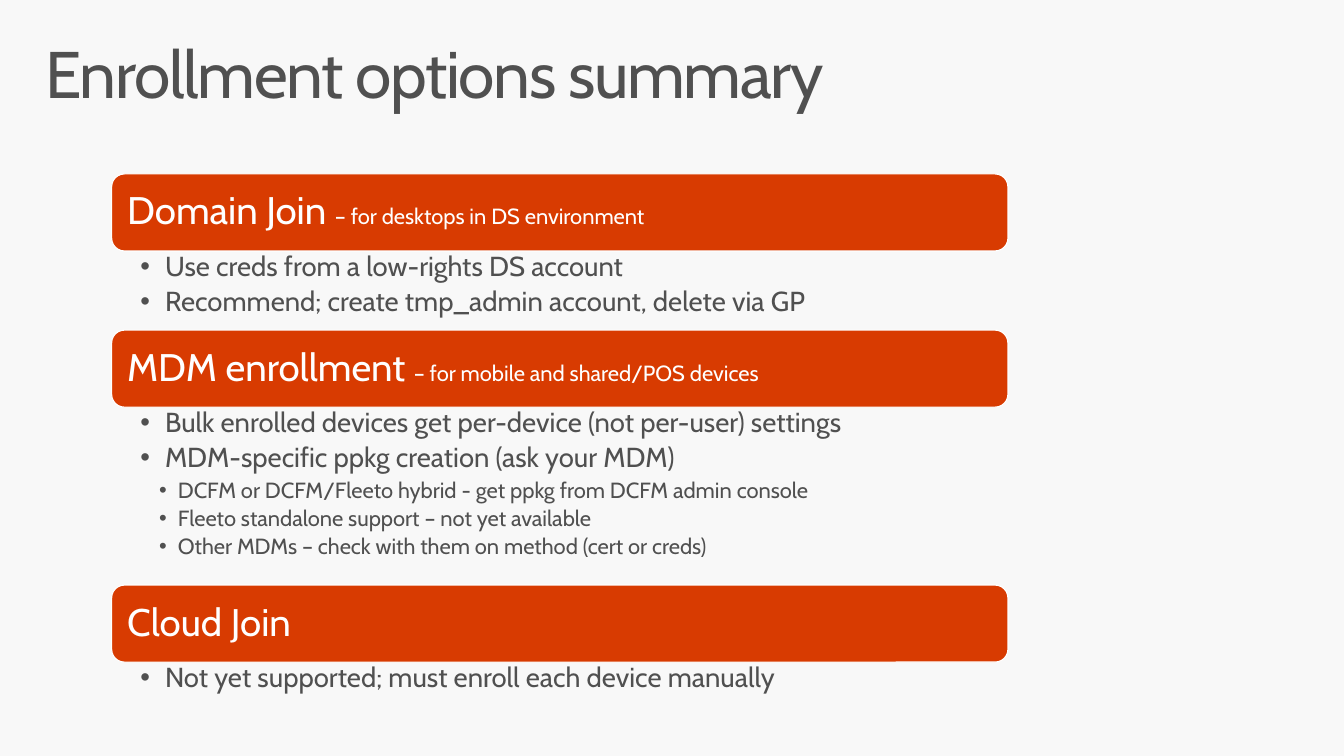
"""Build the enrollment options summary slide."""
from dataclasses import dataclass

from lxml.etree import SubElement as Sub
from pptx import Presentation
from pptx.dml.color import RGBColor as RGB
from pptx.enum.shapes import MSO_SHAPE as Kind
from pptx.enum.text import MSO_ANCHOR as Anchor, PP_ALIGN as Align
from pptx.oxml.ns import qn
from pptx.util import Inches, Pt

TITLE = "Enrollment options summary"
PARTS = [
    ("Domain Join ", "– for desktops in DS environment", 0.8, [
        (1, "Use creds from a low-rights DS account"),
        (1, "Recommend; create tmp_admin account, delete via GP"),
    ]),
    ("MDM enrollment ", "– for mobile and shared/POS devices", 1.8, [
        (1, "Bulk enrolled devices get per-device (not per-user) settings"),
        (1, "MDM-specific ppkg creation (ask your MDM)"),
        (2, "DCFM or DCFM/Fleeto hybrid - get ppkg from DCFM admin console"),
        (2, "Fleeto standalone support – not yet available"),
        (2, "Other MDMs – check with them on method (cert or creds)"),
    ]),
    ("Cloud Join", "", 0.53, [
        (1, "Not yet supported; must enroll each device manually"),
    ]),
]


@dataclass(frozen=True)
class Theme:
    """Hold colours, font and type sizes."""
    back: str = "F8F8F8"
    ink: str = "505050"
    bar: str = "D83B01"
    white: str = "FFFFFF"
    font: str = "Cabin"
    title: int = 48
    head: int = 28
    note: int = 16
    body: tuple = (20, 16)


LOOK = Theme()
LEFT, TOP, WIDE, BAR = 1.13, 1.76, 9.07, 0.78
INDENT = {1: (0.25, 0.25), 2: (0.38, 0.19)}


def style(run, size, color):
    """Give a run its font, size and colour."""
    run.font.name = LOOK.font
    run.font.size = Pt(size)
    run.font.color.rgb = RGB.from_string(color)


def frame(shape, left, top, right, low):
    """Set wrapping and insets, and return the text frame."""
    text = shape.text_frame
    text.word_wrap = True
    text.margin_left, text.margin_top = Inches(left), Inches(top)
    text.margin_right, text.margin_bottom = Inches(right), Inches(low)
    return text


def add_box(slide, left, top, wide, high):
    """Add a text box with lengths in inches."""
    return slide.shapes.add_textbox(*map(Inches, (left, top, wide, high)))


def add_title(slide):
    """Write the slide title."""
    text = frame(add_box(slide, 0.3, 0.32, 13, 1), 0.16, 0.1, 0.16, 0.1)
    text.text = TITLE
    para = text.paragraphs[0]
    para.line_spacing = 0.9
    run = para.runs[0]
    style(run, LOOK.title, LOOK.ink)
    run.font._element.set("spc", "-100")


def add_bar(slide, top, head, note):
    """Draw a heading bar with its side note."""
    bar = slide.shapes.add_shape(
        Kind.ROUNDED_RECTANGLE, *map(Inches, (LEFT, top, WIDE, BAR)))
    bar.shadow.inherit = False
    bar.fill.solid()
    bar.fill.fore_color.rgb = RGB.from_string(LOOK.bar)
    bar.line.color.rgb = RGB.from_string(LOOK.white)
    bar.line.width = Pt(0.85)
    text = frame(bar, 0.12, 0.12, 0.12, 0.12)
    text.vertical_anchor = Anchor.MIDDLE
    para = text.paragraphs[0]
    para.alignment = Align.LEFT
    para.line_spacing = 0.9
    for words, size in ((head, LOOK.head), (note, LOOK.note)):
        if words:
            run = para.add_run()
            run.text = words
            style(run, size, LOOK.white)


def add_list(slide, top, high, items):
    """Write the bullets below a bar."""
    text = frame(add_box(slide, LEFT, top, WIDE, high), 0.29, 0.02, 0.16, 0.02)
    text.text = "\n".join(words for _, words in items)
    for para, (level, _) in zip(text.paragraphs, items):
        size = LOOK.body[level - 1]
        para.level = level
        para.line_spacing = 0.9
        para.space_after = Pt(size * 0.2)
        props = para._p.get_or_add_pPr()
        edge, hang = INDENT[level]
        props.set("marL", str(Inches(edge)))
        props.set("indent", str(-Inches(hang)))
        Sub(props, qn("a:buFont")).set("typeface", "Arial")
        Sub(props, qn("a:buChar")).set("char", "•")
        style(para.runs[0], size, LOOK.ink)


def main():
    """Build and save the deck."""
    deck = Presentation()
    deck.slide_width, deck.slide_height = Inches(13.6), Inches(7.65)
    slide = deck.slides.add_slide(deck.slide_layouts[6])
    slide.background.fill.solid()
    slide.background.fill.fore_color.rgb = RGB.from_string(LOOK.back)
    add_title(slide)
    top = TOP
    for head, note, high, items in PARTS:
        add_bar(slide, top, head, note)
        add_list(slide, top + BAR, high, items)
        top += BAR + high
    deck.save("out.pptx")


if __name__ == "__main__":
    main()
